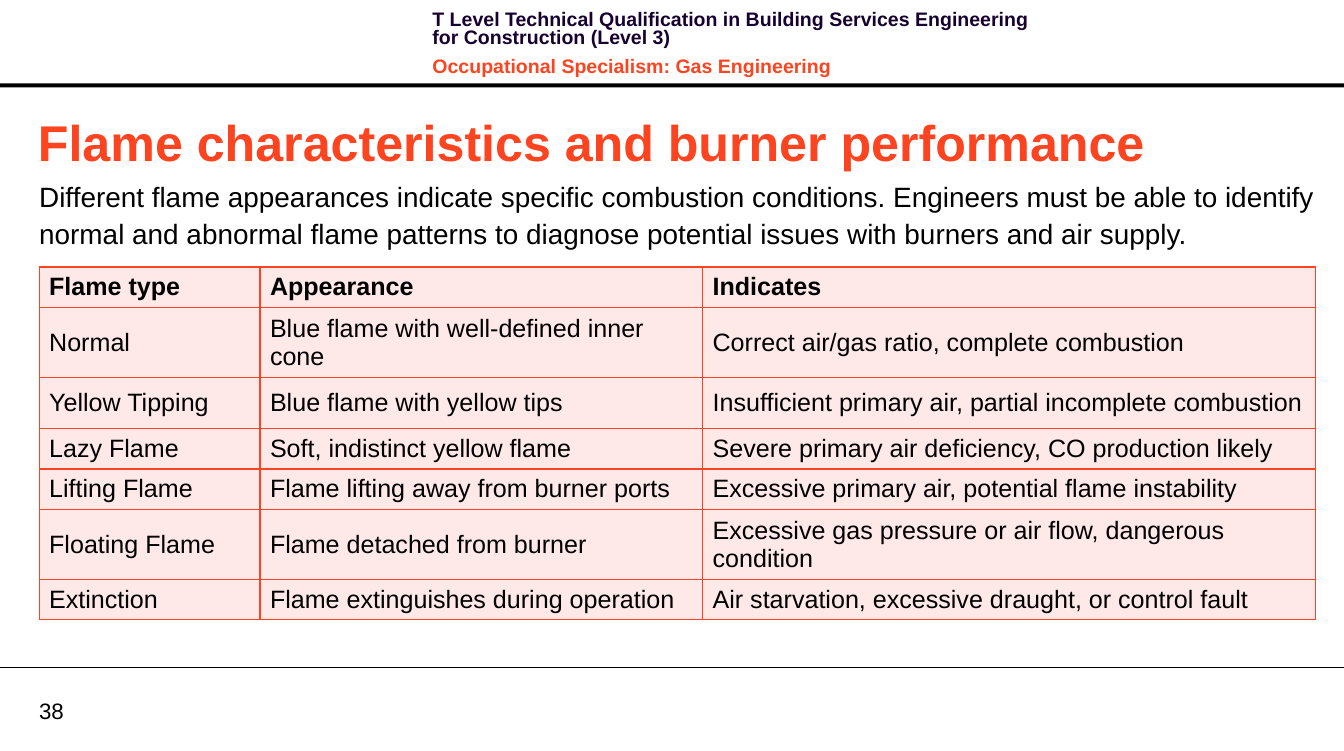
from lxml import etree
from pptx import Presentation
from pptx.dml.color import RGBColor
from pptx.enum.shapes import MSO_CONNECTOR, MSO_SHAPE
from pptx.enum.text import MSO_ANCHOR
from pptx.oxml import parse_xml
from pptx.oxml.ns import nsdecls, qn
from pptx.util import Inches, Pt

TOP, MIDDLE = MSO_ANCHOR.TOP, MSO_ANCHOR.MIDDLE
RECTANGLE, STRAIGHT = MSO_SHAPE.RECTANGLE, MSO_CONNECTOR.STRAIGHT
FONT = "Arial"
COLOURS = {"text": "000000", "course": "170130", "accent": "FC4421", "cell": "FEE9E8"}
SLIDE_WIDTH, SLIDE_HEIGHT = 13.39, 7.48
MARGIN, CONTENT_WIDTH = 0.39, 12.72

COLUMN_WIDTHS = [2.2, 4.41, 6.11]
SHORT_ROW, TALL_ROW = 0.31, 0.51
ROW_HEIGHTS = [SHORT_ROW, TALL_ROW, TALL_ROW, SHORT_ROW, SHORT_ROW, TALL_ROW, SHORT_ROW]
FLAMES = [
    ("Flame type", "Appearance", "Indicates"),
    ("Normal", "Blue flame with well-defined inner cone",
     "Correct air/gas ratio, complete combustion"),
    ("Yellow Tipping", "Blue flame with yellow tips",
     "Insufficient primary air, partial incomplete combustion"),
    ("Lazy Flame", "Soft, indistinct yellow flame",
     "Severe primary air deficiency, CO production likely"),
    ("Lifting Flame", "Flame lifting away from burner ports",
     "Excessive primary air, potential flame instability"),
    ("Floating Flame", "Flame detached from burner",
     "Excessive gas pressure or air flow, dangerous condition"),
    ("Extinction", "Flame extinguishes during operation",
     "Air starvation, excessive draught, or control fault"),
]


def rgb(name):
    return RGBColor.from_string(COLOURS[name])


def style(paragraph, size, colour="text", bold=False):
    font = paragraph.font
    font.name, font.size, font.bold = FONT, Pt(size), bold
    font.color.rgb = rgb(colour)


def add_text(slide, left, top, width, height, lines, size, bold=False,
             anchor=TOP, insets=(0, 0), spacing=None, before=0, after=0):
    box = slide.shapes.add_textbox(Inches(left), Inches(top), Inches(width), Inches(height))
    frame = box.text_frame
    frame.word_wrap = True
    frame.vertical_anchor = anchor
    frame.margin_left = frame.margin_right = Inches(insets[0])
    frame.margin_top = frame.margin_bottom = Inches(insets[1])
    for index, (text, colour) in enumerate(lines):
        paragraph = frame.add_paragraph() if index else frame.paragraphs[0]
        paragraph.text = text
        paragraph.line_spacing = spacing
        paragraph.space_before = Pt(before if index else 0)
        paragraph.space_after = Pt(after)
        style(paragraph, size, colour, bold)


def add_header_bar(slide):
    bar = slide.shapes.add_shape(RECTANGLE, 0, Inches(0.83), Inches(SLIDE_WIDTH), Inches(0.04))
    bar.shadow.inherit = False
    bar.fill.solid()
    bar.fill.fore_color.rgb = rgb("text")
    bar.line.fill.background()


def add_footer_rule(slide):
    rule = slide.shapes.add_connector(
        STRAIGHT, 0, Inches(6.65), Inches(SLIDE_WIDTH), Inches(6.65))
    rule.line.color.rgb = rgb("text")
    rule.line.width = Pt(0.75)
    etree.SubElement(rule._element.spPr, qn("a:effectLst"))


def add_borders(cell):
    properties = cell._tc.get_or_add_tcPr()
    for index, side in enumerate(("lnL", "lnR", "lnT", "lnB")):
        properties.insert(index, parse_xml(
            f'<a:{side} {nsdecls("a")} w="{Pt(1)}"><a:solidFill>'
            f'<a:srgbClr val="{COLOURS["accent"]}"/></a:solidFill></a:{side}>'))


def add_flame_table(slide):
    table = slide.shapes.add_table(
        len(FLAMES), len(COLUMN_WIDTHS), Inches(MARGIN), Inches(2.66),
        Inches(CONTENT_WIDTH), Inches(sum(ROW_HEIGHTS))).table
    table.horz_banding = False
    for column, width in zip(table.columns, COLUMN_WIDTHS):
        column.width = Inches(width)
    for row_index, (row, height, texts) in enumerate(zip(table.rows, ROW_HEIGHTS, FLAMES)):
        row.height = Inches(height)
        for cell, text in zip(row.cells, texts):
            cell.text = text
            cell.vertical_anchor = MIDDLE
            cell.fill.solid()
            cell.fill.fore_color.rgb = rgb("cell")
            add_borders(cell)
            style(cell.text_frame.paragraphs[0], 18, bold=row_index == 0)


def main():
    presentation = Presentation()
    presentation.slide_width = Inches(SLIDE_WIDTH)
    presentation.slide_height = Inches(SLIDE_HEIGHT)
    slide = presentation.slides.add_slide(presentation.slide_layouts[6])

    add_header_bar(slide)
    add_text(slide, MARGIN, 6.94, 0.64, 0.27, [("38", "text")], 16, anchor=MIDDLE)
    add_footer_rule(slide)
    add_text(slide, 4.21, 0.07, 6.37, 0.64, [
        ("T Level Technical Qualification in Building Services Engineering "
         "for Construction (Level 3)", "course"),
        ("Occupational Specialism: Gas Engineering", "accent"),
    ], 14, bold=True, insets=(0.1, 0.05), spacing=Pt(13.1), before=4, after=4)
    add_text(slide, 0.28, 1.05, CONTENT_WIDTH, 0.71,
             [("Flame characteristics and burner performance", "accent")],
             36, bold=True, anchor=MIDDLE, insets=(0.1, 0.05))
    add_text(slide, MARGIN, 1.76, CONTENT_WIDTH, 0.8, [
        ("Different flame appearances indicate specific combustion conditions. "
         "Engineers must be able to identify normal and abnormal flame patterns "
         "to diagnose potential issues with burners and air supply.", "text"),
    ], 20, spacing=1.1, after=12)
    add_flame_table(slide)
    presentation.save("out.pptx")


if __name__ == "__main__":
    main()
